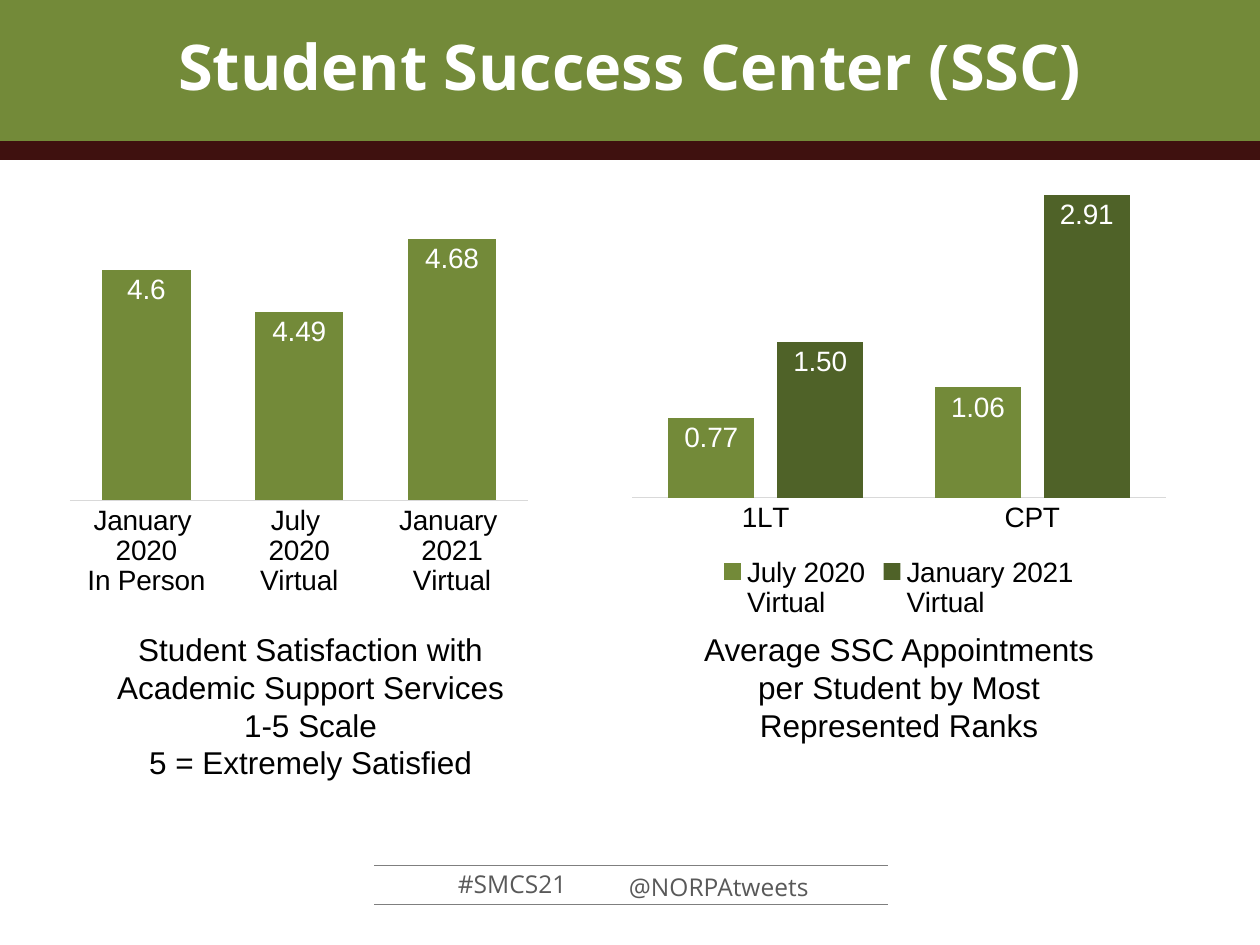
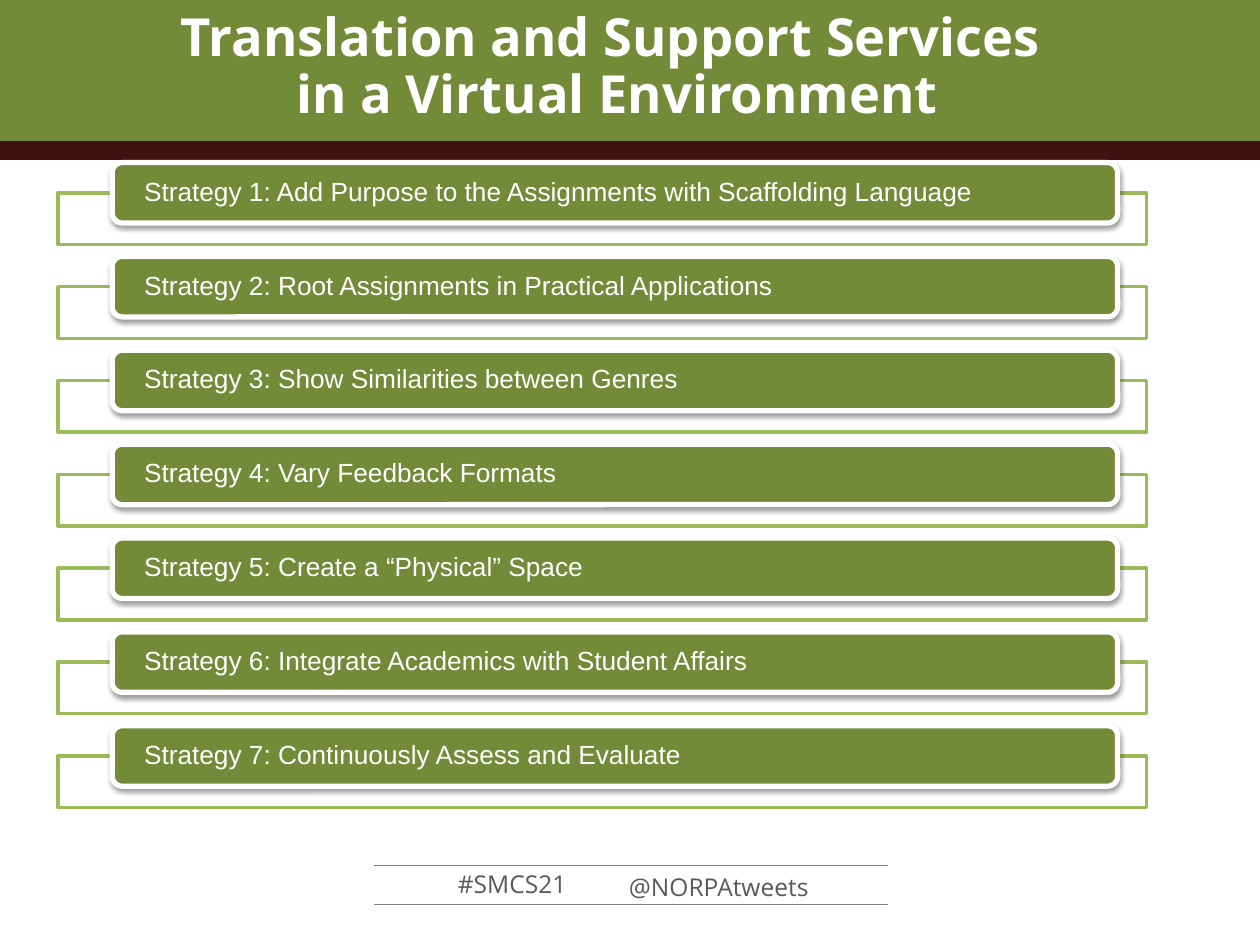
from dataclasses import dataclass
import pptx
import pptx.chart.data
import pptx.dml.color
import pptx.enum.chart
import pptx.enum.shapes
import pptx.enum.text
import pptx.oxml
import pptx.oxml.ns
import pptx.util
from pptx.util import Inches

GREEN, DARK, LIME, MAROON = "738A39", "4F6228", "9BBB59", "3F110F"
WHITE, BLACK, GREY, RULE, PALE = "FFFFFF", "000000", "595959", "7F7F7F", "D9D9D9"
HEAD, BODY = "Open Sans", "Arial"
ALIGN = pptx.enum.text.PP_ALIGN
ANCHOR = pptx.enum.text.MSO_ANCHOR
SHAPE = pptx.enum.shapes.MSO_SHAPE
CHART = pptx.enum.chart


@dataclass
class Box:
    left: float
    top: float
    width: float
    height: float

    def place(self) -> tuple:
        return tuple(Inches(side) for side in (self.left, self.top, self.width, self.height))


@dataclass
class Series:
    name: str
    values: tuple
    color: str


@dataclass
class Graph:
    box: Box
    groups: tuple
    series: tuple
    gap: int
    overlap: int
    format: str = "General"
    limits: tuple = (None, None)
    legend: bool = False


@dataclass
class Label:
    box: Box
    lines: tuple
    size: float
    font: str
    color: str


FOOTER = (
    Label(Box(4.76, 6.87, 1.89, 0.34), ("@NORPAtweets",), 14, HEAD, GREY),
    Label(Box(3.12, 6.85, 1.89, 0.34), ("#SMCS21",), 14, HEAD, GREY),
)
BANDS = ((Box(0, 0, 10, 1.12), GREEN), (Box(0, 1.12, 10, 0.15), MAROON))

GRAPHS = (
    Graph(
        Box(0.48, 0.84, 3.79, 3.97),
        ("January \n2020\nIn Person", "July \n2020\nVirtual", "January \n2021\nVirtual"),
        (Series("Series 1", (4.6, 4.49, 4.68), GREEN),),
        gap=73, overlap=87, limits=(4, 5),
    ),
    Graph(
        Box(4.93, 0.98, 4.41, 3.97),
        ("1LT", "CPT"),
        (
            Series("July 2020\nVirtual", (0.77, 1.06), GREEN),
            Series("January 2021\nVirtual", (1.5, 2.91), DARK),
        ),
        gap=84, overlap=-27, format="0.00", legend=True,
    ),
)
NOTES = (
    Label(
        Box(0.66, 4.95, 3.61, 1.31),
        ("Student Satisfaction with Academic Support Services", "1-5 Scale",
         "5 = Extremely Satisfied"),
        18, BODY, BLACK,
    ),
    Label(
        Box(5.33, 4.95, 3.61, 1.01),
        ("Average SSC Appointments per Student by Most Represented Ranks",),
        18, BODY, BLACK,
    ),
)
TASKS = (
    "Add Purpose to the Assignments with Scaffolding Language",
    "Root Assignments in Practical Applications",
    "Show Similarities between Genres",
    "Vary Feedback Formats",
    "Create a “Physical” Space",
    "Integrate Academics with Student Affairs",
    "Continuously Assess and Evaluate",
)
PITCH = 0.745


def rgb(color: str) -> pptx.dml.color.RGBColor:
    return pptx.dml.color.RGBColor.from_string(color)


def style(font, size: float, name: str, color: str, bold: bool = False) -> None:
    font.size = pptx.util.Pt(size)
    font.name = name
    font.bold = bold
    font.color.rgb = rgb(color)


def block(slide, kind, box: Box, fill: str | None, line: str | None = None, width: float = 1):
    shape = slide.shapes.add_shape(kind, *box.place())
    if fill:
        shape.fill.solid()
        shape.fill.fore_color.rgb = rgb(fill)
    else:
        shape.fill.background()
    if line:
        shape.line.color.rgb = rgb(line)
        shape.line.width = pptx.util.Pt(width)
    else:
        shape.line.fill.background()
    shape.shadow.inherit = False
    return shape


def write(slide, label: Label) -> None:
    frame = slide.shapes.add_textbox(*label.box.place()).text_frame
    frame.word_wrap = True
    frame.text = "\n".join(label.lines)
    for para in frame.paragraphs:
        para.alignment = ALIGN.CENTER
        style(para.font, label.size, label.font, label.color)


def rule(slide, top: float) -> None:
    line = slide.shapes.add_connector(
        pptx.enum.shapes.MSO_CONNECTOR.STRAIGHT,
        Inches(2.97), Inches(top), Inches(7.05), Inches(top))
    line.line.color.rgb = rgb(RULE)
    line.line.width = pptx.util.Pt(0.75)
    line.element.spPr.append(pptx.oxml.parse_xml(
        f'<a:effectLst {pptx.oxml.ns.nsdecls("a")}/>'))


def dress(slide) -> None:
    layout = slide.slide_layout
    for holder in list(layout.placeholders):
        if holder.placeholder_format.type != pptx.enum.shapes.PP_PLACEHOLDER.TITLE:
            layout.shapes.element.remove(holder.element)
    for label in FOOTER:
        write(slide, label)
    for top in (6.87, 7.18):
        rule(slide, top)
    for box, color in BANDS:
        block(slide, SHAPE.RECTANGLE, box, color)
    for shape in list(slide.shapes):
        if not shape.is_placeholder:
            layout.shapes.element.append(shape.element)


def entitle(slide, text: str, box: Box, size: float) -> None:
    title = slide.shapes.title
    title.left, title.top, title.width, title.height = box.place()
    frame = title.text_frame
    frame.auto_size = pptx.enum.text.MSO_AUTO_SIZE.NONE
    frame.vertical_anchor = ANCHOR.TOP
    frame.margin_top = Inches(0.08)
    frame.text = text
    para = frame.paragraphs[0]
    para.alignment = ALIGN.CENTER
    para.line_spacing = 0.9
    style(para.font, size, HEAD, WHITE, True)


def plot(slide, graph: Graph) -> None:
    data = pptx.chart.data.CategoryChartData(number_format=graph.format)
    data.categories = graph.groups
    for item in graph.series:
        data.add_series(item.name, item.values)
    chart = slide.shapes.add_chart(
        CHART.XL_CHART_TYPE.COLUMN_CLUSTERED, *graph.box.place(), data).chart
    style(chart.font, 10, BODY, BLACK)
    chart.has_title = False
    chart.has_legend = graph.legend
    if graph.legend:
        chart.legend.position = CHART.XL_LEGEND_POSITION.BOTTOM
        chart.legend.include_in_layout = False
        style(chart.legend.font, 16, BODY, BLACK)

    axis = chart.category_axis
    axis.major_tick_mark = CHART.XL_TICK_MARK.NONE
    axis.format.line.color.rgb = rgb(PALE)
    axis.format.line.width = pptx.util.Pt(0.75)
    style(axis.tick_labels.font, 16, BODY, BLACK)
    scale = chart.value_axis
    scale.visible = False
    scale.has_major_gridlines = False
    scale.minimum_scale, scale.maximum_scale = graph.limits

    bars = chart.plots[0]
    bars.vary_by_categories = False
    bars.gap_width = graph.gap
    bars.overlap = graph.overlap
    for item, series in zip(graph.series, bars.series):
        series.invert_if_negative = False
        series.format.fill.solid()
        series.format.fill.fore_color.rgb = rgb(item.color)
        labels = series.data_labels
        labels.show_value = True
        labels.position = CHART.XL_LABEL_POSITION.INSIDE_END
        labels.number_format = graph.format
        labels.number_format_is_linked = False
        style(labels.font, 16, BODY, WHITE)


def shade(shape) -> None:
    effects = shape.element.spPr.find(pptx.oxml.ns.qn("a:effectLst"))
    blur, drop = pptx.util.Pt(3.1), pptx.util.Pt(1.6)
    effects.append(pptx.oxml.parse_xml(
        f'<a:outerShdw {pptx.oxml.ns.nsdecls("a")} blurRad="{blur}" dist="{drop}" '
        'dir="5400000" rotWithShape="0"><a:srgbClr val="000000">'
        '<a:alpha val="38000"/></a:srgbClr></a:outerShdw>'))


def card(slide, index: int, task: str) -> None:
    top = 1.29 + index * PITCH
    block(slide, SHAPE.RECTANGLE, Box(0.46, top + 0.24, 8.64, 0.41), WHITE, LIME, 2)
    shape = block(slide, SHAPE.ROUNDED_RECTANGLE, Box(0.89, top, 7.98, 0.48), GREEN, WHITE, 3)
    shade(shape)
    frame = shape.text_frame
    frame.word_wrap = True
    frame.vertical_anchor = ANCHOR.MIDDLE
    frame.margin_left = frame.margin_right = Inches(0.23)
    frame.margin_top = frame.margin_bottom = 0
    frame.text = f"Strategy {index + 1}: {task}"
    para = frame.paragraphs[0]
    para.alignment = ALIGN.LEFT
    para.line_spacing = 0.9
    style(para.font, 15, BODY, WHITE)


def main() -> None:
    deck = pptx.Presentation()
    deck.slide_width, deck.slide_height = Inches(10), Inches(7.5)
    layout = deck.slide_layouts.get_by_name("Title Only")

    center = deck.slides.add_slide(layout)
    dress(center)
    entitle(center, "Student Success Center (SSC)", Box(0, 0.21, 10, 1.25), 36)
    for graph in GRAPHS:
        plot(center, graph)
    for note in NOTES:
        write(center, note)

    support = deck.slides.add_slide(layout)
    entitle(support, "Translation and Support Services \vin a Virtual Environment",
            Box(-0.26, 0.01, 10.32, 1.25), 30)
    for index, task in enumerate(TASKS):
        card(support, index, task)

    deck.save("out.pptx")


if __name__ == "__main__":
    main()
